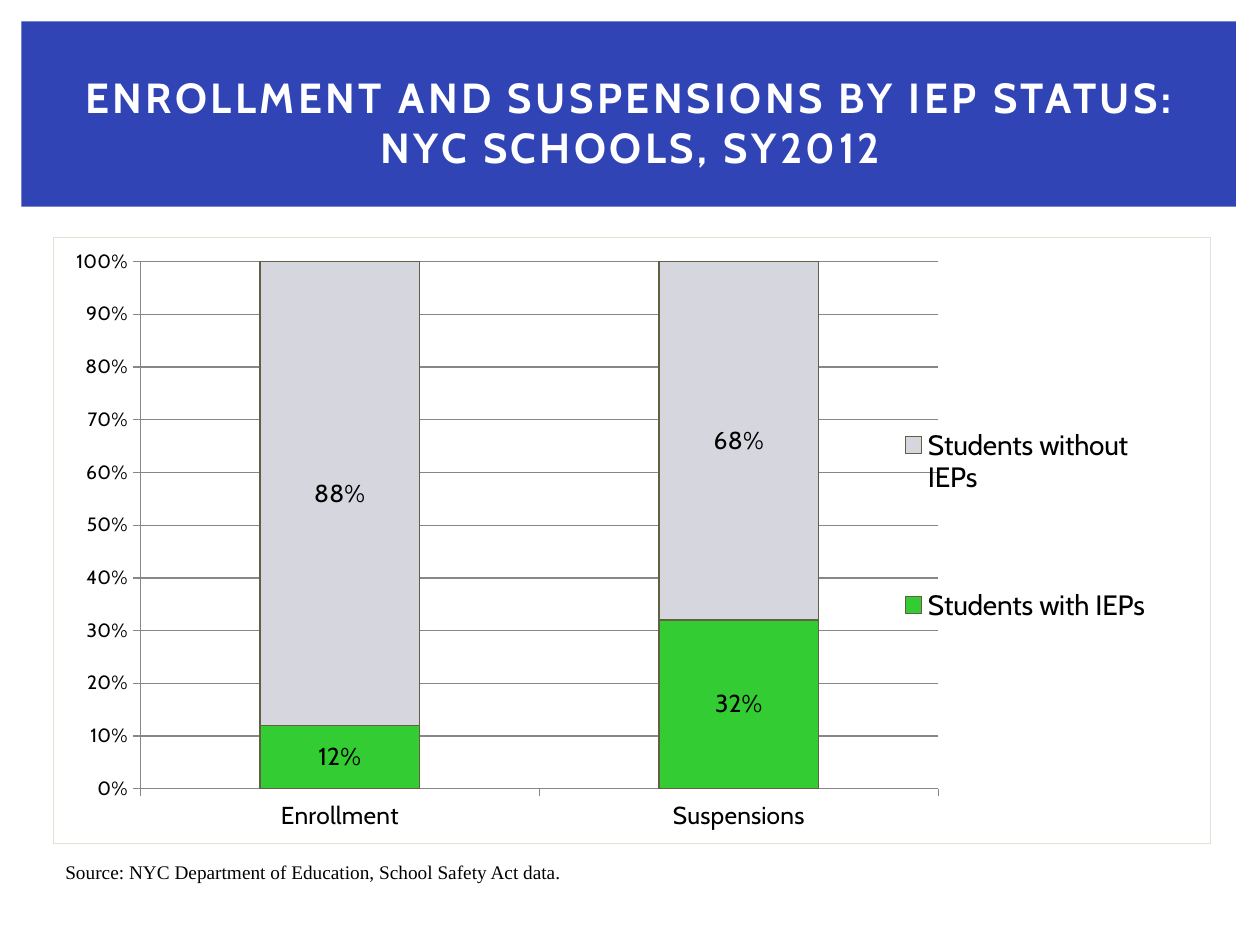
from lxml import etree
from pptx import Presentation
from pptx.chart.data import CategoryChartData
from pptx.dml.color import RGBColor
from pptx.enum.chart import XL_CHART_TYPE, XL_LABEL_POSITION, XL_LEGEND_POSITION, XL_TICK_MARK
from pptx.enum.shapes import MSO_SHAPE
from pptx.enum.text import MSO_ANCHOR, MSO_AUTO_SIZE, PP_ALIGN
from pptx.oxml import parse_xml
from pptx.oxml.ns import qn
from pptx.util import Inches, Pt

TITLE = "ENROLLMENT AND SUSPENSIONS BY IEP STATUS: NYC SCHOOLS, SY2012"
SOURCE = "Source: NYC Department of Education, School Safety Act data."
GROUPS = ["Enrollment", "Suspensions"]
SERIES = [
    ("Students with IEPs", (0.12, 0.32), "33CC33"),
    ("Students without IEPs", (0.88, 0.68), "D6D7DE"),
]
PLOT = {"x": 0.075, "y": 0.04, "w": 0.69, "h": 0.87}
LEGEND = {"x": 0.72, "y": 0.16, "w": 0.24, "h": 0.63}
GRAY = "878787"
NS = ('xmlns:c="http://schemas.openxmlformats.org/drawingml/2006/chart" '
      'xmlns:a="http://schemas.openxmlformats.org/drawingml/2006/main"')


def box(*sizes):
    return [Inches(size) for size in sizes]


def paint(fill, color):
    fill.solid()
    fill.fore_color.rgb = RGBColor.from_string(color)


def stroke(line, color):
    paint(line.fill, color)
    line.width = Pt(0.75)


def style(font, name, size, color="000000", bold=False):
    font.name, font.size, font.bold = name, Pt(size), bold
    font.color.rgb = RGBColor.from_string(color)


def layout(owner, **area):
    """Make a manual layout, in shares of the chart's size."""
    for old in owner.findall(qn("c:layout")):
        owner.remove(old)
    node = etree.Element(qn("c:layout"))
    manual = etree.SubElement(node, qn("c:manualLayout"))
    if owner.tag == qn("c:plotArea"):
        etree.SubElement(manual, qn("c:layoutTarget")).set("val", "inner")
    for key in "xy":
        etree.SubElement(manual, qn(f"c:{key}Mode")).set("val", "edge")
    for key, share in area.items():
        etree.SubElement(manual, qn(f"c:{key}")).set("val", str(share))
    return node


def add_chart(slide):
    data = CategoryChartData(number_format="0%")
    data.categories = GROUPS
    for name, shares, _ in SERIES:
        data.add_series(name, shares)
    chart = slide.shapes.add_chart(
        XL_CHART_TYPE.COLUMN_STACKED_100, *box(0.42, 1.88, 9.19, 4.82), data).chart
    style(chart.font, "Cabin", 10)
    chart.has_title = False

    plot = chart.plots[0]
    plot.gap_width, plot.overlap = 150, 100
    plot.vary_by_categories = False
    for series, (_, _, color) in zip(plot.series, SERIES):
        paint(series.format.fill, color)
        stroke(series.format.line, "616042")
        labels = series.data_labels
        labels.show_value = True
        labels.position = XL_LABEL_POSITION.CENTER
        labels.number_format, labels.number_format_is_linked = "0%", False
        style(labels.font, "Cabin", 14)

    for axis, size in ((chart.category_axis, 14), (chart.value_axis, 11)):
        axis.major_tick_mark = XL_TICK_MARK.OUTSIDE
        axis.minor_tick_mark = XL_TICK_MARK.NONE
        stroke(axis.format.line, GRAY)
        style(axis.tick_labels.font, "Cabin", size)
    scale = chart.value_axis
    scale.minimum_scale, scale.maximum_scale, scale.major_unit = 0, 1, 0.1
    scale.tick_labels.number_format = "0%"
    scale.tick_labels.number_format_is_linked = False
    stroke(scale.major_gridlines.format.line, GRAY)

    chart.has_legend = True
    legend = chart.legend
    legend.position = XL_LEGEND_POSITION.RIGHT
    legend.include_in_layout = False
    style(legend.font, "Cabin", 16)

    root = chart.element
    area = root.find(".//" + qn("c:plotArea"))
    area.insert(0, layout(area, **PLOT))
    key = root.find(".//" + qn("c:legend"))
    key.find(qn("c:legendPos")).addnext(layout(key, **LEGEND))
    root.find(qn("c:chart")).addnext(parse_xml(
        f'<c:spPr {NS}><a:solidFill><a:srgbClr val="FFFFFF"/></a:solidFill>'
        '<a:ln w="9525"><a:solidFill><a:srgbClr val="E1E1D3"/></a:solidFill></a:ln></c:spPr>'))


def main():
    deck = Presentation()
    deck.slide_width, deck.slide_height = box(10, 7.5)
    slide = deck.slides.add_slide(deck.slide_layouts[5])

    title = slide.shapes.title
    band = slide.shapes.add_shape(MSO_SHAPE.RECTANGLE, *box(0.17, 0.17, 9.64, 1.47))
    band.shadow.inherit = False
    paint(band.fill, "3044B5")
    band.line.fill.background()
    title.element.addprevious(band.element)

    title.left, title.top, title.width, title.height = box(0.42, 0.39, 9.17, 1.15)
    frame = title.text_frame
    frame.text = TITLE
    frame.word_wrap = True
    frame.auto_size = MSO_AUTO_SIZE.NONE
    frame.vertical_anchor = MSO_ANCHOR.MIDDLE
    frame.paragraphs[0].alignment = PP_ALIGN.CENTER
    style(frame.paragraphs[0].runs[0].font, "Cabin", 24, "FFFFFF", True)
    title.element.find(".//" + qn("a:rPr")).set("spc", "200")

    add_chart(slide)

    note = slide.shapes.add_textbox(*box(0.42, 6.78, 9, 0.29)).text_frame
    note.text = SOURCE
    note.word_wrap = True
    note.auto_size = MSO_AUTO_SIZE.SHAPE_TO_FIT_TEXT
    style(note.paragraphs[0].runs[0].font, "Times New Roman", 11)

    deck.save("out.pptx")


if __name__ == "__main__":
    main()
